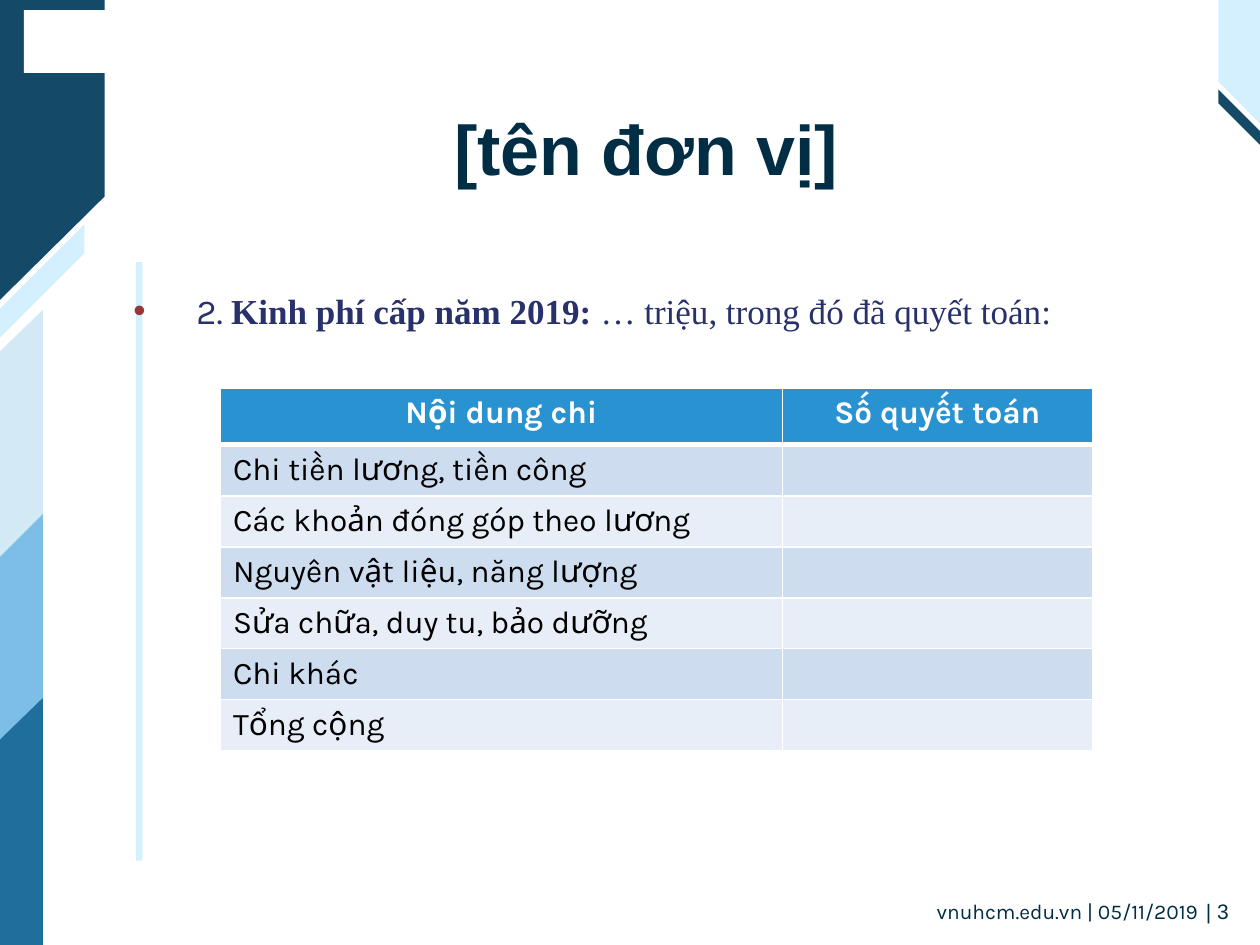
import pptx
import pptx.dml.color
import pptx.enum.shapes
import pptx.enum.text
import pptx.oxml
import pptx.oxml.ns
import pptx.util

RGB = pptx.dml.color.RGBColor
ALIGN = pptx.enum.text.PP_ALIGN
ANCHOR = pptx.enum.text.MSO_ANCHOR
inches = pptx.util.Inches

WHITE = RGB(0xFF, 0xFF, 0xFF)
BLACK = RGB(0, 0, 0)
NAVY = RGB(0x15, 0x49, 0x68)
INK = RGB(0x01, 0x2E, 0x45)
INDIGO = RGB(0x28, 0x31, 0x6A)
PALE = RGB(0xD4, 0xF0, 0xFE)
MIST = RGB(0xD3, 0xE9, 0xF6)
SKY = RGB(0x7C, 0xBE, 0xE5)
OCEAN = RGB(0x1F, 0x6E, 0x9C)
HEADER = RGB(0x29, 0x92, 0xD0)
BANDS = (RGB(0xCD, 0xDC, 0xEE), RGB(0xE8, 0xEE, 0xF7))
BULLET = RGB(0x95, 0x37, 0x35)

WIDTH, HEIGHT = 10, 7.5
STRIPE = 0.34
RIGHT_EDGE = WIDTH - 0.33

TITLE = "[tên đơn vị]"
HEADING = [
    ("2. ", {"name": "Karla"}),
    ("Kinh phí cấp năm 2019: ", {"name": "Times New Roman", "bold": True}),
    ("… triệu, trong đó đã quyết toán:", {"name": "Times New Roman"}),
]
FOOTER = "vnuhcm.edu.vn | 05/11/2019"
PAGE_NUMBER = "| 3"
TABLE_HEAD = ["Nội dung chi", "Số quyết toán"]
EXPENSES = [
    "Chi tiền lương, tiền công",
    "Các khoản đóng góp theo lương",
    "Nguyên vật liệu, năng lượng",
    "Sửa chữa, duy tu, bảo dưỡng",
    "Chi khác",
    "Tổng cộng",
]
COLUMN_WIDTHS = (4.46, 2.46)
HEAD_HEIGHT, ROW_HEIGHT = 0.45, 0.405

SLANTED_BANDS = [
    (0, 0.83, (0, 0), (2.38, 1.56), NAVY),
    (0, STRIPE, (2.79, 2.46), (4.42, 4.42), MIST),
    (0, 0.67, (2.45, 1.78), (2.68, 2.01), PALE),
    (0, STRIPE, (4.42, 4.08), (6.04, 6.04), SKY),
    (RIGHT_EDGE, WIDTH, (0.71, 1.04), (0.82, 1.15), NAVY),
    (RIGHT_EDGE, WIDTH, (0, 0), (0.65, 0.98), PALE),
    (0, STRIPE, (5.87, 5.54), (HEIGHT, HEIGHT), OCEAN),
]
PLAIN_BARS = [
    ((0.19, 0.08, 1.35, 0.5), WHITE),
    ((1.08, 2.08, 0.05, 4.75), PALE),
]


def paint(shape, color):
    shape.shadow.inherit = False
    shape.fill.solid()
    shape.fill.fore_color.rgb = color
    shape.line.fill.background()


def add_band(page, left, right, tops, bottoms, color):
    corners = [(left, tops[0]), (right, tops[1]), (right, bottoms[1]), (left, bottoms[0])]
    points = [(inches(x), inches(y)) for x, y in corners]
    builder = page.shapes.build_freeform(*points[0], scale=1.0)
    builder.add_line_segments(points[1:], close=True)
    paint(builder.convert_to_shape(), color)


def add_span(para, text, color, **font_values):
    span = para.add_run()
    span.text = text
    span.font.color.rgb = color
    for name, value in font_values.items():
        setattr(span.font, name, value)


def add_box(page, place, **frame_values):
    frame = page.shapes.add_textbox(*map(inches, place)).text_frame
    frame.word_wrap = True
    for name, value in frame_values.items():
        setattr(frame, name, value)
    return frame.paragraphs[0]


def add_bullet(para, color):
    properties = para._p.get_or_add_pPr()
    properties.set("marL", str(inches(0.5)))
    properties.set("indent", str(inches(-0.5)))
    namespace = pptx.oxml.ns.nsdecls("a")
    for xml in (
        f'<a:buClr {namespace}><a:srgbClr val="{color}"/></a:buClr>',
        f'<a:buFont {namespace} typeface="Arial"/>',
        f'<a:buChar {namespace} char="•"/>',
    ):
        properties.append(pptx.oxml.parse_xml(xml))


def set_borders(cell, bottom_width, top_width):
    properties = cell._tc.get_or_add_tcPr()
    namespace = pptx.oxml.ns.nsdecls("a")
    widths = {"lnL": 1, "lnR": 1, "lnT": top_width, "lnB": bottom_width}
    for index, (side, width) in enumerate(widths.items()):
        properties.insert(index, pptx.oxml.parse_xml(
            f'<a:{side} {namespace} w="{pptx.util.Pt(width)}"><a:solidFill>'
            f'<a:srgbClr val="{WHITE}"/></a:solidFill></a:{side}>'))


def add_expense_table(page):
    rows = [TABLE_HEAD] + [[expense, ""] for expense in EXPENSES]
    height = HEAD_HEIGHT + ROW_HEIGHT * len(EXPENSES)
    place = map(inches, (1.75, 3.08, sum(COLUMN_WIDTHS), height))
    table = page.shapes.add_table(len(rows), len(COLUMN_WIDTHS), *place).table
    for column, width in zip(table.columns, COLUMN_WIDTHS):
        column.width = inches(width)
    for r, texts in enumerate(rows):
        is_head = r == 0
        table.rows[r].height = inches(HEAD_HEIGHT if is_head else ROW_HEIGHT)
        for c, text in enumerate(texts):
            cell = table.cell(r, c)
            cell.fill.solid()
            cell.fill.fore_color.rgb = HEADER if is_head else BANDS[(r - 1) % 2]
            set_borders(cell, 3 if is_head else 1, 3 if r == 1 else 1)
            para = cell.text_frame.paragraphs[0]
            para.alignment = ALIGN.CENTER if is_head else ALIGN.LEFT
            if text:
                add_span(para, text, WHITE if is_head else BLACK,
                         name="Karla", size=pptx.util.Pt(18), bold=is_head)


def main():
    deck = pptx.Presentation()
    deck.slide_width, deck.slide_height = inches(WIDTH), inches(HEIGHT)
    page = deck.slides.add_slide(deck.slide_layouts[6])

    for band in SLANTED_BANDS:
        add_band(page, *band)
    for place, color in PLAIN_BARS:
        bar = page.shapes.add_shape(
            pptx.enum.shapes.MSO_SHAPE.RECTANGLE, *map(inches, place))
        paint(bar, color)

    para = add_box(page, (0.92, 0.75, 8.42, 0.84), vertical_anchor=ANCHOR.MIDDLE)
    para.alignment = ALIGN.CENTER
    add_span(para, TITLE, INK, name="Arial", size=pptx.util.Pt(40), bold=True)

    para = add_box(page, (0.96, 2.25, 7.56, 4.24))
    add_bullet(para, BULLET)
    for text, font_values in HEADING:
        add_span(para, text, INDIGO, size=pptx.util.Pt(20), **font_values)

    para = add_box(page, (5.17, 7.08, 4.34, 0.3), margin_right=0)
    para.alignment = ALIGN.RIGHT
    add_span(para, FOOTER, INK, name="Karla", size=pptx.util.Pt(12))
    para = add_box(page, (9.5, 7.08, 0.5, 0.3), margin_left=inches(0.07))
    add_span(para, PAGE_NUMBER, INK, name="Arial", size=pptx.util.Pt(12))

    add_expense_table(page)
    deck.save("out.pptx")


if __name__ == "__main__":
    main()
